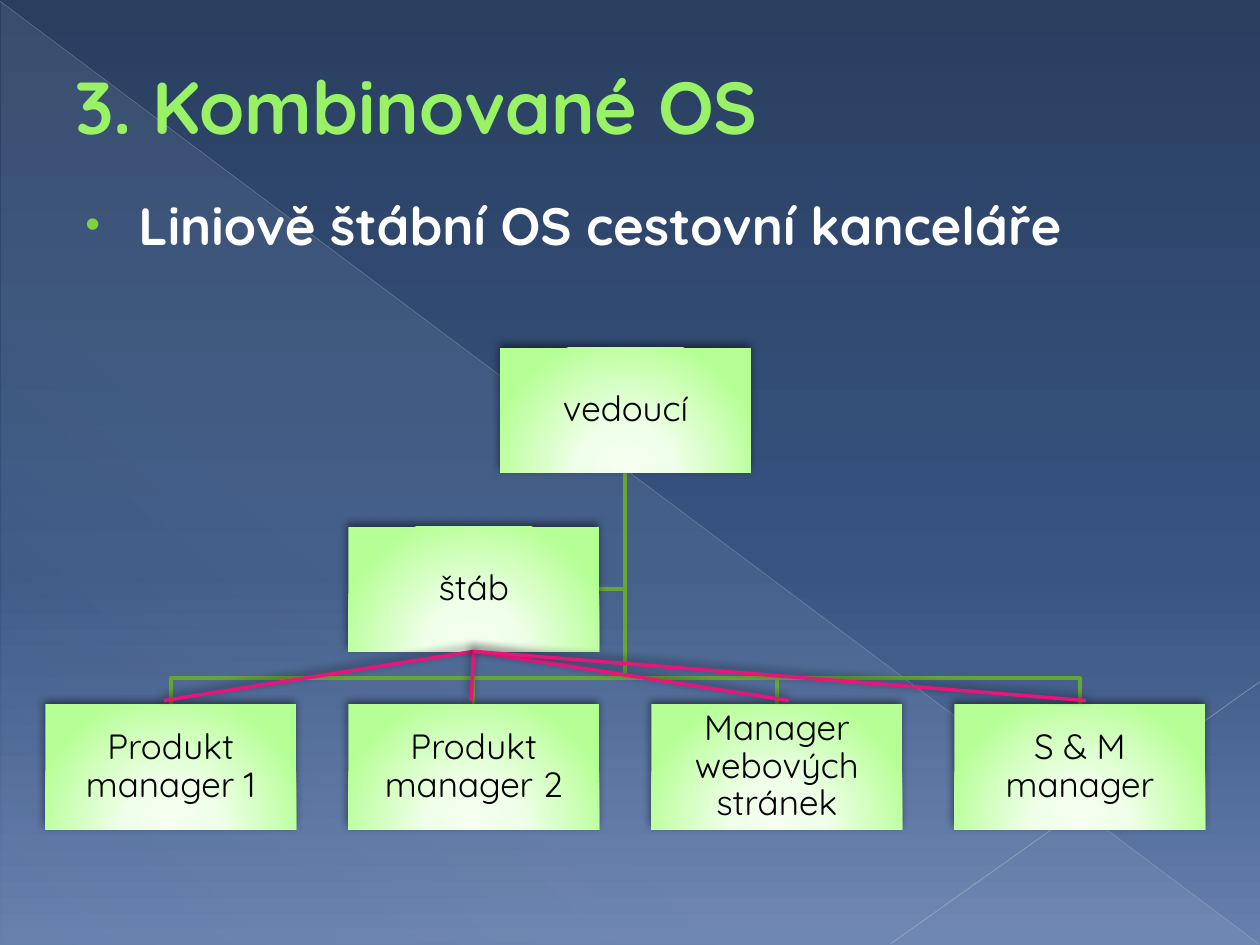
"""Build the slide with a line-and-staff organisation chart of a travel agency."""
from dataclasses import dataclass
from typing import Optional

import lxml.etree
import pptx
import pptx.dml.color
import pptx.enum.shapes
import pptx.enum.text
import pptx.oxml
import pptx.oxml.ns
import pptx.util

Inches = pptx.util.Inches
Pt = pptx.util.Pt
RGBColor = pptx.dml.color.RGBColor
qn = pptx.oxml.ns.qn

SKY_TOP = RGBColor(0x29, 0x3F, 0x60)
SKY_MID = RGBColor(0x37, 0x53, 0x80)
SKY_LOW = RGBColor(0x66, 0x7F, 0xAC)
HAZE = RGBColor(0xD6, 0xEC, 0xFF)
LONG_RAY = RGBColor(0xB7, 0xBC, 0xC5)
SHORT_RAY = RGBColor(0xBF, 0xC3, 0xCB)
TITLE = RGBColor(0x99, 0xF1, 0x66)
TITLE_EDGE = RGBColor(0x58, 0x91, 0x29)
BULLET = RGBColor(0x7F, 0xD1, 0x3B)
BRANCH = RGBColor(0x66, 0xA7, 0x2F)
STAFF = RGBColor(0xEA, 0x15, 0x7A)
BOX_CORE = RGBColor(0xF4, 0xFF, 0xF0)
BOX_MID = RGBColor(0xF0, 0xFF, 0xEA)
BOX_EDGE = RGBColor(0xB6, 0xFF, 0x95)
WHITE = RGBColor(0xFF, 0xFF, 0xFF)
BLACK = RGBColor(0, 0, 0)

FONT = "Quicksand"
BOX_W, BOX_H = 1.99, 0.99
LEFT, PITCH = 0.36, 2.405
HEAD_Y, STAFF_Y, ROW_Y = 2.76, 4.18, 5.59
TRUNK_X, BUS_Y = 4.96, 5.38


@dataclass
class Stop:
    pos: int
    color: RGBColor
    alpha: int = 100


@dataclass
class Box:
    text: str
    x: float
    y: float


@dataclass
class Ray:
    start: tuple[float, float]
    end: tuple[float, float]
    color: RGBColor
    width: float
    alpha: int


BOX_STOPS = [Stop(0, BOX_CORE), Stop(34, BOX_MID), Stop(100, BOX_EDGE)]
BOX_SHADE = '<a:path path="circle"><a:fillToRect l="50000" t="155000" r="50000" b="-55000"/></a:path>'
RAYS = [
    Ray((0, 0.01), (9.99, 7.49), LONG_RAY, 0.39, 35),
    Ray((10, 5.41), (7.07, 7.49), SHORT_RAY, 0.47, 45),
]
HEAD = Box("vedoucí", 3.97, HEAD_Y)
STAB = Box("štáb", LEFT + PITCH, STAFF_Y)
MANAGERS = [
    Box(name, LEFT + i * PITCH, ROW_Y)
    for i, name in enumerate(
        ["Produkt manager 1", "Produkt manager 2", "Manager webových stránek", "S & M manager"]
    )
]
STAFF_ENDS = [1.3, 3.74, 6.26, 8.62]


def parse_a(xml: str):
    """Parse one DrawingML element written with the a: prefix."""
    head, mark, tail = xml.partition(">")
    slash = "/" if head.endswith("/") else ""
    return pptx.oxml.parse_xml(f"{head.rstrip('/')} {pptx.oxml.ns.nsdecls('a')}{slash}{mark}{tail}")


def set_gradient(parent, stops: list[Stop], shade: str) -> None:
    """Replace the solid fill of a properties element by a gradient."""
    gs = "".join(
        f'<a:gs pos="{st.pos * 1000}"><a:srgbClr val="{st.color}">'
        f'<a:alpha val="{st.alpha * 1000}"/></a:srgbClr></a:gs>'
        for st in stops
    )
    grad = parse_a(f'<a:gradFill rotWithShape="1"><a:gsLst>{gs}</a:gsLst>{shade}</a:gradFill>')
    parent.replace(parent.find(qn("a:solidFill")), grad)


def linear(angle: int) -> str:
    """Return the shading of a linear gradient."""
    return f'<a:lin ang="{angle * 60000}" scaled="0"/>'


def set_effects(sp, shadowed: bool) -> None:
    """Give a shape the soft shadow of the chart, or none."""
    spPr = sp._element.spPr
    for old in spPr.findall(qn("a:effectLst")):
        spPr.remove(old)
    shadow = (
        f'<a:outerShdw blurRad="{Pt(5)}" dist="{Pt(2)}" dir="{245 * 60000}" rotWithShape="0">'
        f'<a:srgbClr val="{BLACK}"><a:alpha val="50000"/></a:srgbClr></a:outerShdw>'
    )
    spPr.append(parse_a(f"<a:effectLst>{shadow if shadowed else ''}</a:effectLst>"))


def add_run(p, text: str, size: float, color: RGBColor, bold: bool = False):
    """Add a formatted run to a paragraph."""
    r = p.add_run()
    r.text = text
    r.font.name, r.font.size, r.font.bold = FONT, Pt(size), bold
    r.font.color.rgb = color
    return r


def set_indent(p, margin: float, first: float) -> None:
    """Set the left margin and first-line indent of a paragraph."""
    pPr = p._p.get_or_add_pPr()
    pPr.set("marL", str(Inches(margin)))
    pPr.set("indent", str(Inches(first)))


def add_line(s, start, end, color: RGBColor, width: float, shadowed: bool, alpha: Optional[int] = None):
    """Draw a straight connector."""
    points = [Inches(v) for v in (*start, *end)]
    cx = s.shapes.add_connector(pptx.enum.shapes.MSO_CONNECTOR.STRAIGHT, *points)
    cx.line.color.rgb = color
    cx.line.width = Pt(width)
    if alpha is not None:
        clr = cx._element.spPr.find(".//" + qn("a:srgbClr"))
        lxml.etree.SubElement(clr, qn("a:alpha")).set("val", str(alpha * 1000))
    set_effects(cx, shadowed)
    return cx


def add_branch(s, points: list[tuple[float, float]]) -> None:
    """Draw an angled branch of the line structure."""
    emu = [(Inches(x), Inches(y)) for x, y in points]
    fb = s.shapes.build_freeform(*emu[0])
    fb.add_line_segments(emu[1:], close=False)
    sp = fb.convert_to_shape()
    sp.fill.background()
    sp.line.color.rgb = BRANCH
    sp.line.width = Pt(2)
    sp.shadow.inherit = False


def add_box(s, box: Box):
    """Draw one position of the chart with its label."""
    sp = s.shapes.add_shape(
        pptx.enum.shapes.MSO_SHAPE.RECTANGLE, Inches(box.x), Inches(box.y), Inches(BOX_W), Inches(BOX_H)
    )
    sp.fill.solid()
    set_gradient(sp._element.spPr, BOX_STOPS, BOX_SHADE)
    sp.line.fill.background()
    set_effects(sp, True)
    tf = sp.text_frame
    tf.word_wrap = True
    tf.vertical_anchor = pptx.enum.text.MSO_ANCHOR.MIDDLE
    tf.margin_left = tf.margin_right = tf.margin_top = tf.margin_bottom = Inches(0.01)
    p = tf.paragraphs[0]
    p.alignment = pptx.enum.text.PP_ALIGN.CENTER
    p.line_spacing, p.space_after = 0.9, Pt(7)
    add_run(p, box.text, 20, BLACK)
    return sp


def add_backdrop(s) -> None:
    """Draw the gradient background, the haze and the rays."""
    s.background.fill.solid()
    sky = [Stop(0, SKY_TOP), Stop(60, SKY_MID), Stop(100, SKY_LOW)]
    set_gradient(s.element.find(".//" + qn("p:bgPr")), sky, linear(90))
    sp = s.shapes.add_shape(
        pptx.enum.shapes.MSO_SHAPE.RIGHT_TRIANGLE, Inches(0.01), Inches(0.02), Inches(9.99), Inches(7.48)
    )
    sp.fill.solid()
    set_gradient(sp._element.spPr, [Stop(0, HAZE, 10), Stop(70, HAZE, 8), Stop(100, HAZE, 1)], linear(133))
    sp.line.fill.background()
    sp.shadow.inherit = False
    for ray in RAYS:
        add_line(s, ray.start, ray.end, ray.color, ray.width, False, ray.alpha)


def add_headings(s) -> None:
    """Fill the title and add the bulleted subtitle."""
    title = s.shapes.title
    s.shapes._spTree.append(title._element)
    title.left, title.top, title.width, title.height = (Inches(v) for v in (0.5, 0.29, 9, 1.09))
    tf = title.text_frame
    tf.auto_size = pptx.enum.text.MSO_AUTO_SIZE.NONE
    tf.vertical_anchor = pptx.enum.text.MSO_ANCHOR.MIDDLE
    p = tf.paragraphs[0]
    p.alignment = pptx.enum.text.PP_ALIGN.LEFT
    set_indent(p, 0.53, -0.53)
    r = add_run(p, "3. Kombinované OS", 42, TITLE, True)
    edge = f'<a:ln w="{Pt(0.5)}"><a:solidFill><a:srgbClr val="{TITLE_EDGE}"/></a:solidFill></a:ln>'
    r.font._element.insert(0, parse_a(edge))

    tf = s.shapes.add_textbox(Inches(0.51), Inches(1.23), Inches(9), Inches(1.1)).text_frame
    tf.word_wrap = True
    p = tf.paragraphs[0]
    p.line_spacing, p.space_before = 1.5, Pt(6)
    set_indent(p, 0.49, -0.42)
    for xml in (f'<a:buClr><a:srgbClr val="{BULLET}"/></a:buClr>', '<a:buSzPct val="80000"/>',
                '<a:buFont typeface="Arial"/>', '<a:buChar char="•"/>'):
        p._p.get_or_add_pPr().append(parse_a(xml))
    add_run(p, "Liniově štábní OS cestovní kanceláře", 30, WHITE, True)


def main() -> None:
    """Build and save the slide."""
    prs = pptx.Presentation()
    prs.slide_width, prs.slide_height = Inches(10), Inches(7.5)
    s = prs.slides.add_slide(prs.slide_layouts[5])
    add_backdrop(s)
    add_headings(s)
    trunk = (TRUNK_X, HEAD_Y + BOX_H)
    staff_mid = STAFF_Y + BOX_H / 2
    add_branch(s, [trunk, (TRUNK_X, staff_mid), (STAB.x + BOX_W, staff_mid)])
    for box in MANAGERS:
        mid = box.x + BOX_W / 2
        add_branch(s, [trunk, (TRUNK_X, BUS_Y), (mid, BUS_Y), (mid, ROW_Y)])
    for box in [HEAD, *MANAGERS]:
        add_box(s, box)
    stab = add_box(s, STAB)
    for x in STAFF_ENDS:
        cx = add_line(s, (3.74, 5.17), (x, 5.56), STAFF, 2, True)
        cx.begin_connect(stab, 2)
    prs.save("out.pptx")


if __name__ == "__main__":
    main()
